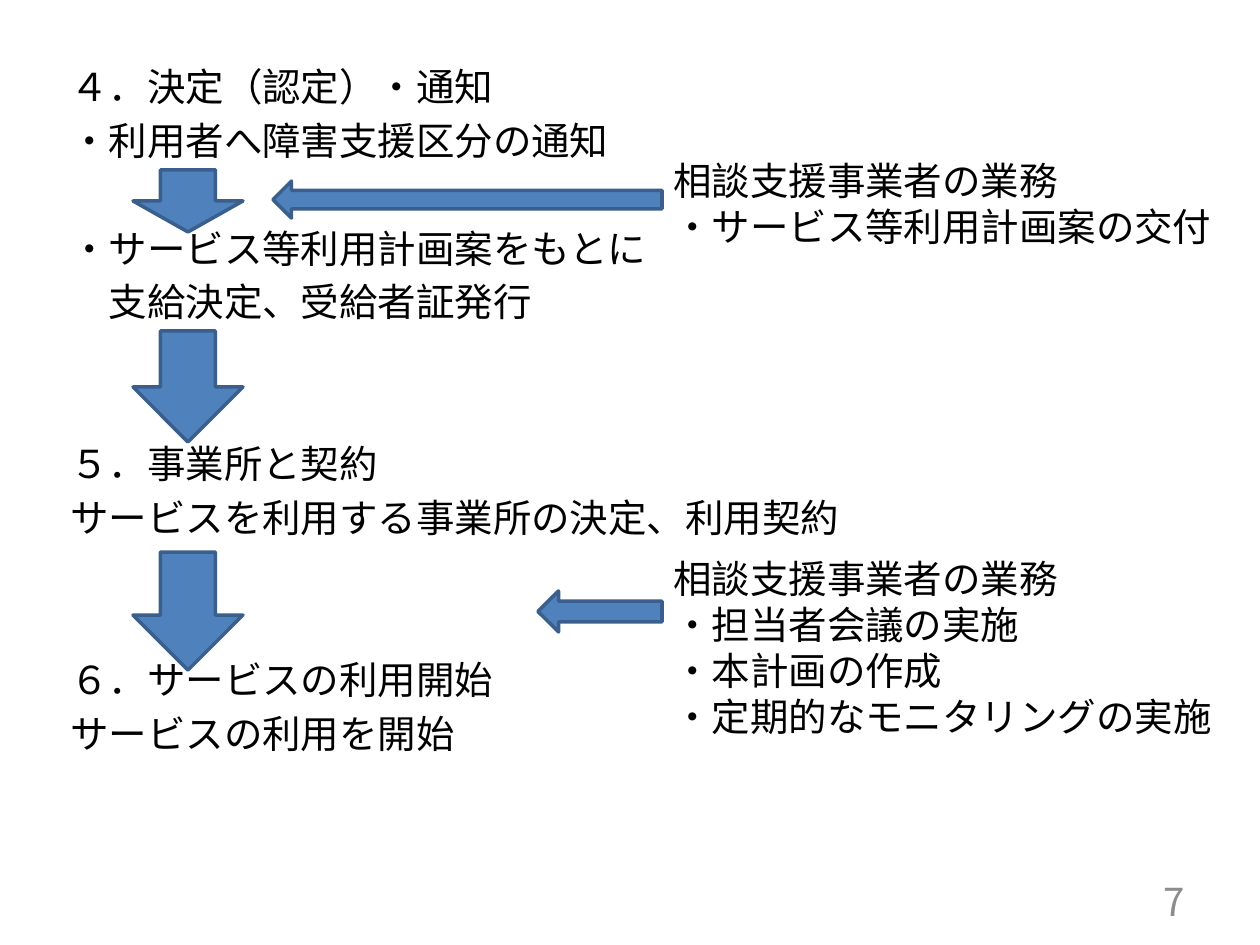
from lxml import etree
from pptx import Presentation, util as u
from pptx.dml.color import RGBColor
from pptx.enum import shapes, text
from pptx.oxml.ns import qn

PX = 914400 / 126
FONT = "Noto Sans CJK JP"
SIZE = 22
LINE = 26.4
GAP = 4.4
COLORS = {"text": "000000", "number": "8C8C8C", "fill": "4F81BD", "line": "3A5F8C"}

# Each step: number of free lines above it, then its wording
STEPS = [
    (0, "４．決定（認定）・通知"),
    (0, "・利用者へ障害支援区分の通知"),
    (1, "・サービス等利用計画案をもとに"),
    (0, "　支給決定、受給者証発行"),
    (2, "５．事業所と契約"),
    (0, "サービスを利用する事業所の決定、利用契約"),
    (2, "６．サービスの利用開始"),
    (0, "サービスの利用を開始"),
]
DUTIES = "相談支援事業者の業務"


def px(n):
    return u.Emu(round(n * PX))


def rgb(name):
    return RGBColor.from_string(COLORS[name])


def add_text(s, box, lines, color="text", inset=6):
    """Place one paragraph per line and return the text frame."""
    tf = s.shapes.add_textbox(*map(px, box)).text_frame
    tf.word_wrap = True
    tf.margin_top = px(inset)
    tf.text = "\n".join(lines)
    for p in tf.paragraphs:
        p.line_spacing = u.Pt(LINE)
        for r in p.runs:
            r.font.size = u.Pt(SIZE)
            r.font.color.rgb = rgb(color)
            r.font.name = FONT
            ea = etree.SubElement(r._r.get_or_add_rPr(), qn("a:ea"))
            ea.set("typeface", FONT)
    return tf


def add_arrow(s, box, kind, rotation=0):
    sp = s.shapes.add_shape(kind, *map(px, box))
    sp.rotation = rotation
    sp.shadow.inherit = False
    sp.fill.solid()
    sp.fill.fore_color.rgb = rgb("fill")
    sp.line.color.rgb = rgb("line")
    sp.line.width = u.Pt(2)


def add_steps(s, box):
    """Column of steps, with down arrows in the free lines."""
    x, y = box[:2]
    tf = add_text(s, box, [line for _, line in STEPS], inset=63)
    for p, (free, _) in zip(tf.paragraphs[1:], STEPS[1:]):
        p.space_before = u.Pt(round(GAP + free * (LINE + GAP), 1))
    for top, height in ((170, 62), (331, 111), (552, 118)):
        add_arrow(s, (x + 75, y + top, 110, height), shapes.MSO_SHAPE.DOWN_ARROW)


def add_duties(s, box, lines, arrow_top, arrow_size, inset):
    """Duties of the consultant, with an arrow pointing back to the steps."""
    x, y = box[:2]
    add_text(s, box, [DUTIES, *lines], inset=inset)
    width, height = arrow_size
    add_arrow(s, (x + 1 - width, y + arrow_top, width, height),
              shapes.MSO_SHAPE.RIGHT_ARROW, 180)


def add_page_number(s, box, number):
    tf = add_text(s, box, [number], "number")
    tf.vertical_anchor = text.MSO_ANCHOR.MIDDLE
    tf.paragraphs[0].alignment = text.PP_ALIGN.RIGHT


def main():
    prs = Presentation()
    prs.slide_width, prs.slide_height = px(1260), px(945)
    s = prs.slides.add_slide(prs.slide_layouts[6])
    add_page_number(s, (903, 876, 294, 50), "7")
    add_steps(s, (58, 0, 1145, 942))
    add_duties(s, (661, 147, 615, 106), ["・サービス等利用計画案の交付"],
               34, (389, 37), 10)
    add_duties(s, (661, 546, 600, 199),
               ["・担当者会議の実施", "・本計画の作成", "・定期的なモニタリングの実施"],
               45, (124, 41), 9)
    prs.save("out.pptx")


if __name__ == "__main__":
    main()
